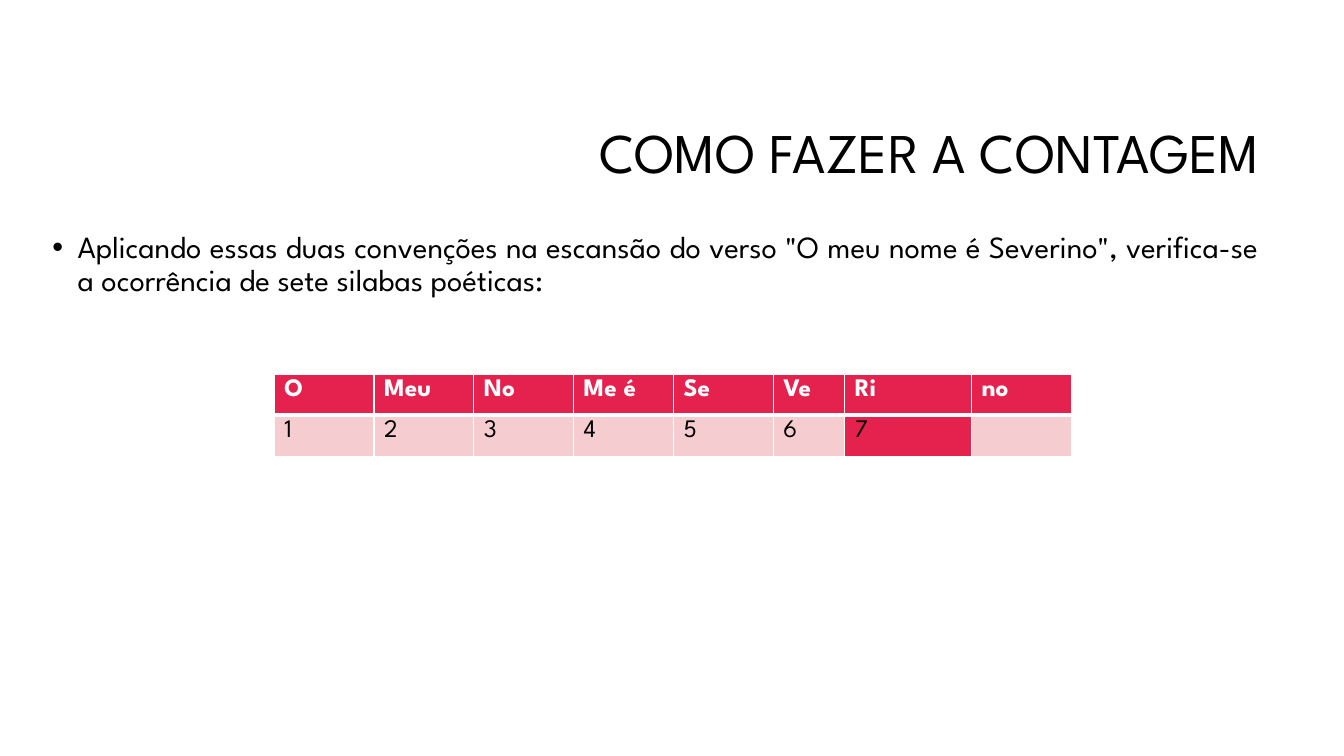
from dataclasses import dataclass

from lxml.etree import SubElement
from pptx import Presentation
from pptx.dml.color import RGBColor
from pptx.enum.text import MSO_ANCHOR, PP_ALIGN
from pptx.oxml.ns import qn
from pptx.util import Inches, Pt

TITLE = "COMO FAZER A CONTAGEM"
BODY = ('Aplicando essas duas convenções na escansão do verso "O meu nome é Severino", '
        "verifica-se a ocorrência de sete silabas poéticas:")
SYLLABLES = ["O", "Meu", "No", "Me é", "Se", "Ve", "Ri", "no"]
COUNTS = ["1", "2", "3", "4", "5", "6", "7", ""]
STRESSED = "7"
COL_WIDTHS = [0.99] * 5 + [0.71, 1.26, 0.99]
ROW_HEIGHT = 0.41


@dataclass(frozen=True)
class Theme:
    font: str = "League Spartan"
    text: str = "000000"
    white: str = "FFFFFF"
    accent: str = "E5224E"
    tint: str = "F5CDD0"
    title_size: int = 40
    body_size: int = 22
    table_size: int = 18


THEME = Theme()


def place(shape, left, top, width, height):
    shape.left, shape.top = Inches(left), Inches(top)
    shape.width, shape.height = Inches(width), Inches(height)


def style_runs(p, size, color, bold=False):
    for r in p.runs:
        r.font.name = THEME.font
        r.font.size = Pt(size)
        r.font.bold = bold
        r.font.color.rgb = RGBColor.from_string(color)


def set_bullet(p, indent):
    pPr = p._p.get_or_add_pPr()
    pPr.set("marL", str(Inches(indent)))
    pPr.set("indent", str(-Inches(indent)))
    SubElement(pPr, qn("a:buFont"), typeface="Arial")
    SubElement(pPr, qn("a:buChar"), char="•")


def set_borders(cell, widths):
    """Draw white borders; widths maps a side (L, R, T, B) to points."""
    tcPr = cell._tc.get_or_add_tcPr()
    for side, width in widths.items():
        ln = SubElement(tcPr, qn(f"a:ln{side}"), w=str(Pt(width)))
        fill = SubElement(ln, qn("a:solidFill"))
        SubElement(fill, qn("a:srgbClr"), val=THEME.white)


def add_title(slide):
    title = slide.shapes.title
    place(title, 3.17, 0.84, 9.42, 1.41)
    tf = title.text_frame
    tf.text = TITLE
    tf.vertical_anchor = MSO_ANCHOR.MIDDLE
    p = tf.paragraphs[0]
    p.alignment = PP_ALIGN.RIGHT
    p.line_spacing = 0.9
    style_runs(p, THEME.title_size, THEME.text)


def add_body(slide):
    body = slide.placeholders[1]
    place(body, 0.42, 2.25, 12.16, 4.55)
    body.text_frame.text = BODY
    p = body.text_frame.paragraphs[0]
    set_bullet(p, 0.25)
    p.alignment = PP_ALIGN.JUSTIFY
    p.line_spacing = 0.9
    p.space_before = Pt(0)
    style_runs(p, THEME.body_size, THEME.text)


def add_syllable_table(slide):
    rows = [SYLLABLES, COUNTS]
    frame = slide.shapes.add_table(
        len(rows), len(SYLLABLES), Inches(2.72), Inches(3.71),
        Inches(sum(COL_WIDTHS)), Inches(ROW_HEIGHT * len(rows)))
    table = frame.table
    table.horz_banding = False
    for column, width in zip(table.columns, COL_WIDTHS):
        column.width = Inches(width)
    for i, values in enumerate(rows):
        header = i == 0
        table.rows[i].height = Inches(ROW_HEIGHT)
        for j, value in enumerate(values):
            cell = table.cell(i, j)
            cell.text = value
            set_borders(cell, {"L": 1, "R": 1, "T": 1 if header else 3,
                               "B": 3 if header else 1})
            strong = header or value == STRESSED
            cell.fill.solid()
            cell.fill.fore_color.rgb = RGBColor.from_string(
                THEME.accent if strong else THEME.tint)
            style_runs(cell.text_frame.paragraphs[0], THEME.table_size,
                       THEME.white if header else THEME.text, header)


def main():
    prs = Presentation()
    prs.slide_width, prs.slide_height = Inches(13.33), Inches(7.5)
    slide = prs.slides.add_slide(prs.slide_layouts[1])
    add_title(slide)
    add_body(slide)
    add_syllable_table(slide)
    prs.save("out.pptx")


if __name__ == "__main__":
    main()
